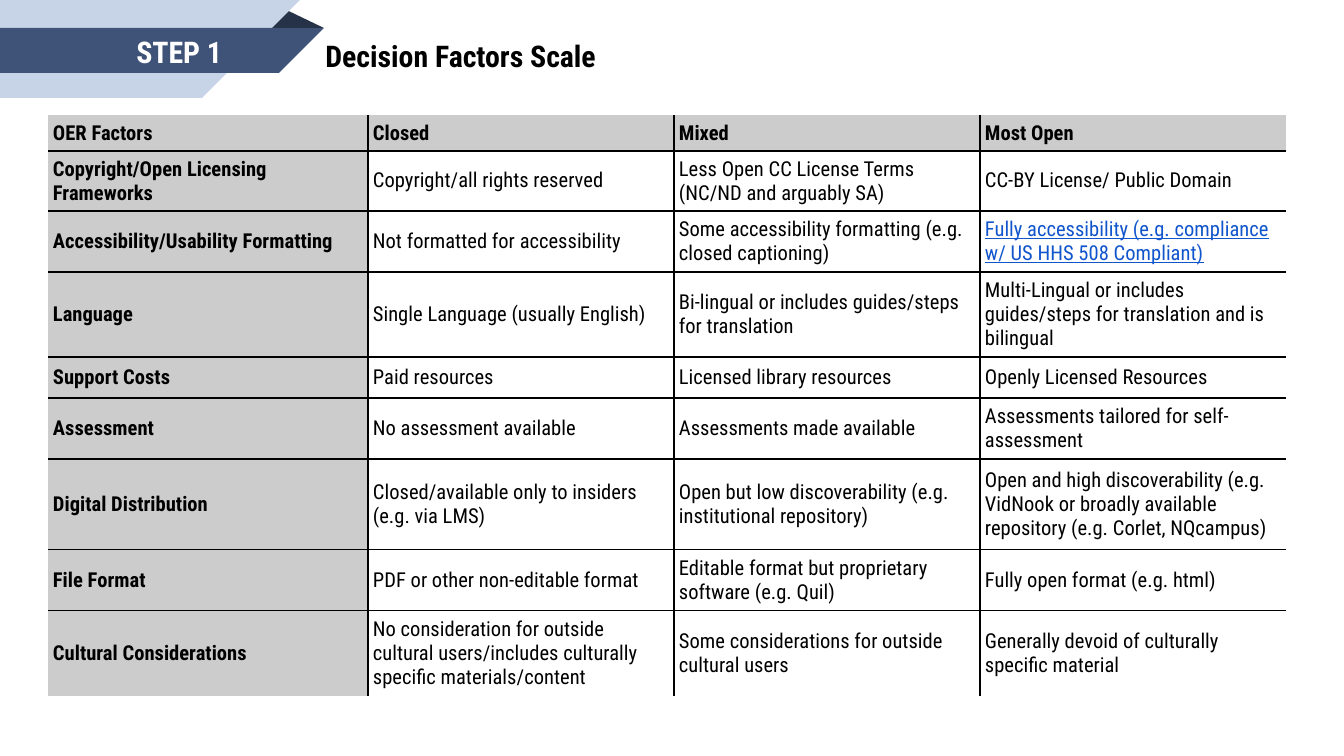
from lxml import etree
from pptx import Presentation
from pptx.dml.color import RGBColor
from pptx.enum.shapes import MSO_SHAPE
from pptx.enum.text import MSO_ANCHOR, MSO_AUTO_SIZE, PP_ALIGN
from pptx.oxml.ns import qn
from pptx.util import Emu, Pt

RECTANGLE = MSO_SHAPE.RECTANGLE
RIGHT_TRIANGLE = MSO_SHAPE.RIGHT_TRIANGLE
TRIANGLE = MSO_SHAPE.ISOSCELES_TRIANGLE
TOP, MIDDLE = MSO_ANCHOR.TOP, MSO_ANCHOR.MIDDLE
LEFT, RIGHT = PP_ALIGN.LEFT, PP_ALIGN.RIGHT

TITLE = "Decision Factors Scale"
STEP = "STEP 1"
FACTORS = [
    ("OER Factors", "Closed", "Mixed", "Most Open"),
    ("Copyright/Open Licensing Frameworks", "Copyright/all rights reserved",
     "Less Open CC License Terms (NC/ND and arguably SA)", "CC-BY License/ Public Domain"),
    ("Accessibility/Usability Formatting", "Not formatted for accessibility",
     "Some accessibility formatting (e.g. closed captioning)",
     "Fully accessibility (e.g. compliance w/ US HHS 508 Compliant)"),
    ("Language", "Single Language (usually English)",
     "Bi-lingual or includes guides/steps for translation",
     "Multi-Lingual or includes guides/steps for translation and is bilingual"),
    ("Support Costs", "Paid resources", "Licensed library resources", "Openly Licensed Resources"),
    ("Assessment", "No assessment available", "Assessments made available",
     "Assessments tailored for self-assessment"),
    ("Digital Distribution", "Closed/available only to insiders (e.g. via LMS)",
     "Open but low discoverability (e.g. institutional repository)",
     "Open and high discoverability (e.g. VidNook or broadly available "
     "repository (e.g. Corlet, NQcampus)"),
    ("File Format", "PDF or other non-editable format",
     "Editable format but proprietary software (e.g. Quil)", "Fully open format (e.g. html)"),
    ("Cultural Considerations",
     "No consideration for outside cultural users/includes culturally specific materials/content",
     "Some considerations for outside cultural users",
     "Generally devoid of culturally specific material"),
]
LINK_CELL = (2, 3)
COLUMN_WIDTHS = [320, 306, 306, 306]
ROW_HEIGHTS = [36, 60, 61, 85, 41, 61, 91, 61, 85]

THEME = {
    "font": "Roboto Condensed",
    "heading_size": 16, "table_size": 11,
    "black": "000000", "white": "FFFFFF", "link": "1155CC", "header": "CCCCCC",
    "pale": "C7D3E6", "navy": "3F5378", "fold": "263248",
}
RIBBON = [
    (TRIANGLE, (266, 9, 58, 19), "fold"),
    (RECTANGLE, (0, 0, 202, 98), "pale"),
    (RIGHT_TRIANGLE, (202, 0, 98, 98), "pale"),
    (RECTANGLE, (0, 28, 279, 45), "navy"),
    (RIGHT_TRIANGLE, (279, 28, 45, 45), "navy"),
]
SLIDE_SIZE = (1344, 756)
TITLE_BOX = (312, 31, 456, 86)
STEP_BOX = (16, 28, 219, 47)
TABLE_ORIGIN = (48, 115)
CELL_INSET = 5
BORDER_POINTS = 1


def px(value):
    return Emu(round(value * 914400 / 134.4))


def color(name):
    return RGBColor.from_string(THEME[name])


def write(frame, text, size="heading_size", ink="black", bold=True, underline=False, align=LEFT):
    frame.word_wrap = True
    paragraph = frame.paragraphs[0]
    paragraph.alignment = align
    run = paragraph.add_run()
    run.text = text
    font = run.font
    font.name, font.size = THEME["font"], Pt(THEME[size])
    font.bold, font.underline = bold, underline
    font.color.rgb = color(ink)


def add_ribbon(slide):
    for kind, box, fill in RIBBON:
        shape = slide.shapes.add_shape(kind, *map(px, box))
        shape.shadow.inherit = False
        shape.fill.solid()
        shape.fill.fore_color.rgb = color(fill)
        shape.line.fill.background()
        if kind == TRIANGLE:
            shape.adjustments[0] = 0.32
        elif kind == RIGHT_TRIANGLE:
            shape.rotation = 180
            shape._element.spPr.find(qn("a:xfrm")).set("flipH", "1")


def set_borders(cell, **sides):
    properties = cell._tc.get_or_add_tcPr()
    for index, (side, visible) in enumerate(sides.items()):
        line = etree.Element(qn(f"a:ln{side}"), w=str(Pt(BORDER_POINTS)))
        if visible:
            fill = etree.SubElement(line, qn("a:solidFill"))
            etree.SubElement(fill, qn("a:srgbClr"), val=THEME["black"])
        else:
            etree.SubElement(line, qn("a:noFill"))
        properties.insert(index, line)


def add_factor_table(slide):
    last_row, last_column = len(FACTORS) - 1, len(COLUMN_WIDTHS) - 1
    size = (sum(COLUMN_WIDTHS), sum(ROW_HEIGHTS))
    table = slide.shapes.add_table(
        len(FACTORS), len(COLUMN_WIDTHS), *map(px, TABLE_ORIGIN + size)).table
    table.first_row = table.horz_banding = False
    for column, width in zip(table.columns, COLUMN_WIDTHS):
        column.width = px(width)
    for row, height in zip(table.rows, ROW_HEIGHTS):
        row.height = px(height)
    for r, texts in enumerate(FACTORS):
        for c, text in enumerate(texts):
            cell = table.cell(r, c)
            is_header = r == 0 or c == 0
            is_link = (r, c) == LINK_CELL
            cell.vertical_anchor = MIDDLE
            cell.margin_left = cell.margin_right = px(CELL_INSET)
            cell.margin_top = cell.margin_bottom = px(CELL_INSET)
            cell.fill.solid()
            cell.fill.fore_color.rgb = color("header" if is_header else "white")
            set_borders(cell, L=c > 0, R=c < last_column, T=r > 0, B=r < last_row)
            write(cell.text_frame, text, size="table_size", bold=is_header,
                  ink="link" if is_link else "black", underline=is_link)


def main():
    presentation = Presentation()
    presentation.slide_width, presentation.slide_height = map(px, SLIDE_SIZE)
    slide = presentation.slides.add_slide(presentation.slide_layouts[5])

    add_ribbon(slide)

    step = slide.shapes.add_textbox(*map(px, STEP_BOX))
    step.text_frame.vertical_anchor = MIDDLE
    step.text_frame.margin_right = px(13)
    write(step.text_frame, STEP, ink="white", align=RIGHT)

    add_factor_table(slide)

    title = slide.shapes.title
    title.left, title.top, title.width, title.height = map(px, TITLE_BOX)
    title.text_frame.vertical_anchor = TOP
    title.text_frame.auto_size = MSO_AUTO_SIZE.NONE
    write(title.text_frame, TITLE)

    presentation.save("out.pptx")


if __name__ == "__main__":
    main()
